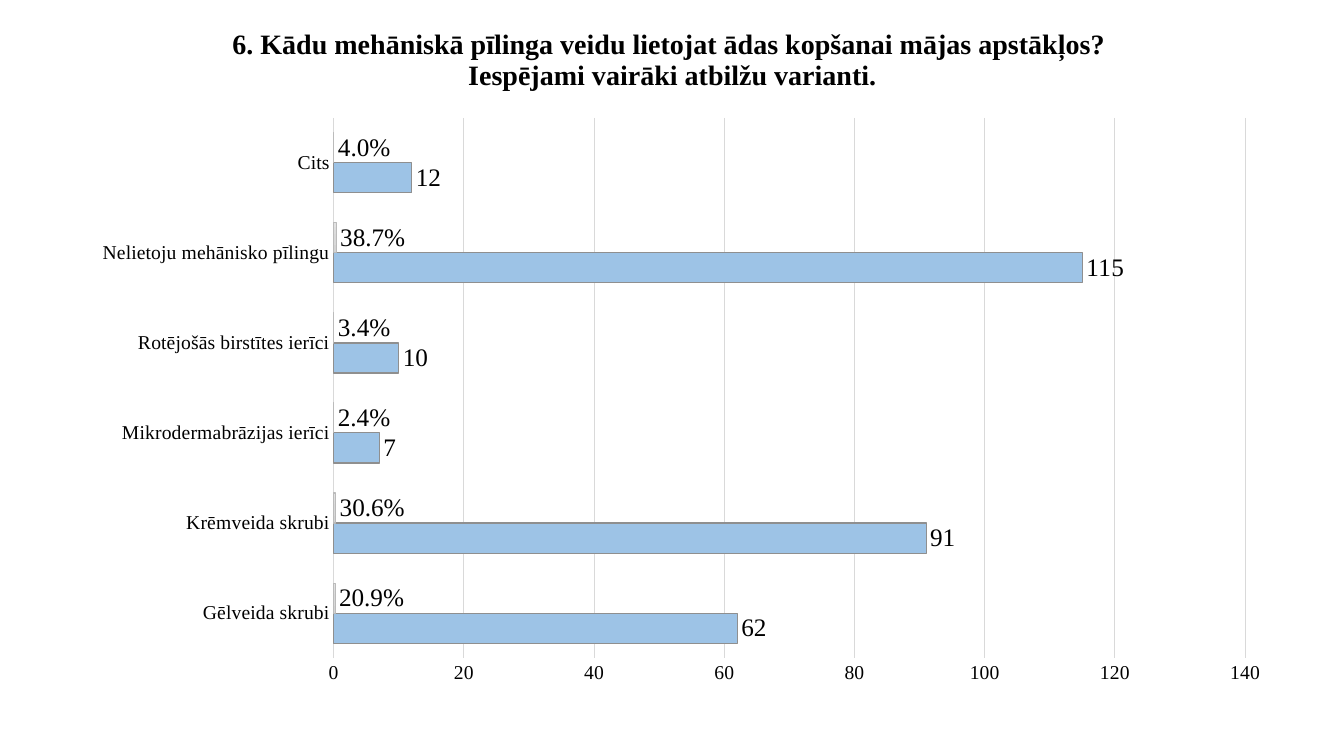
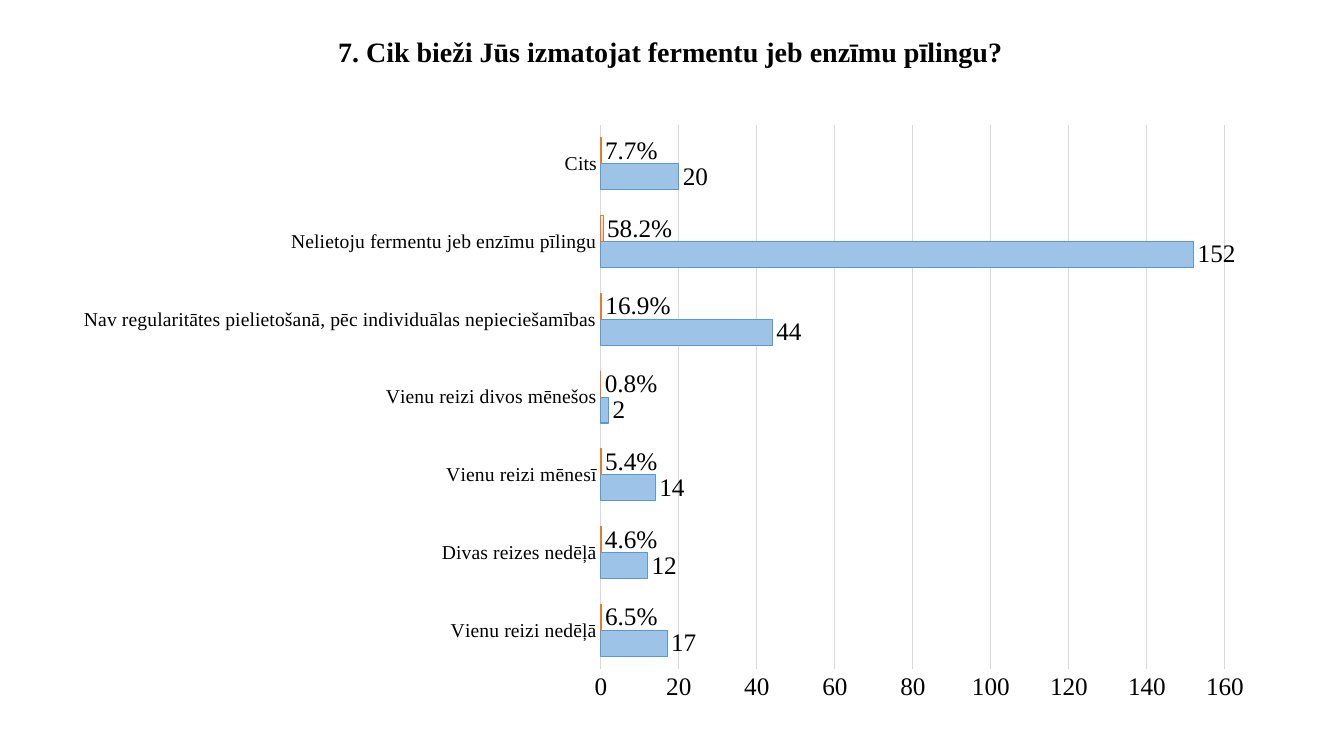
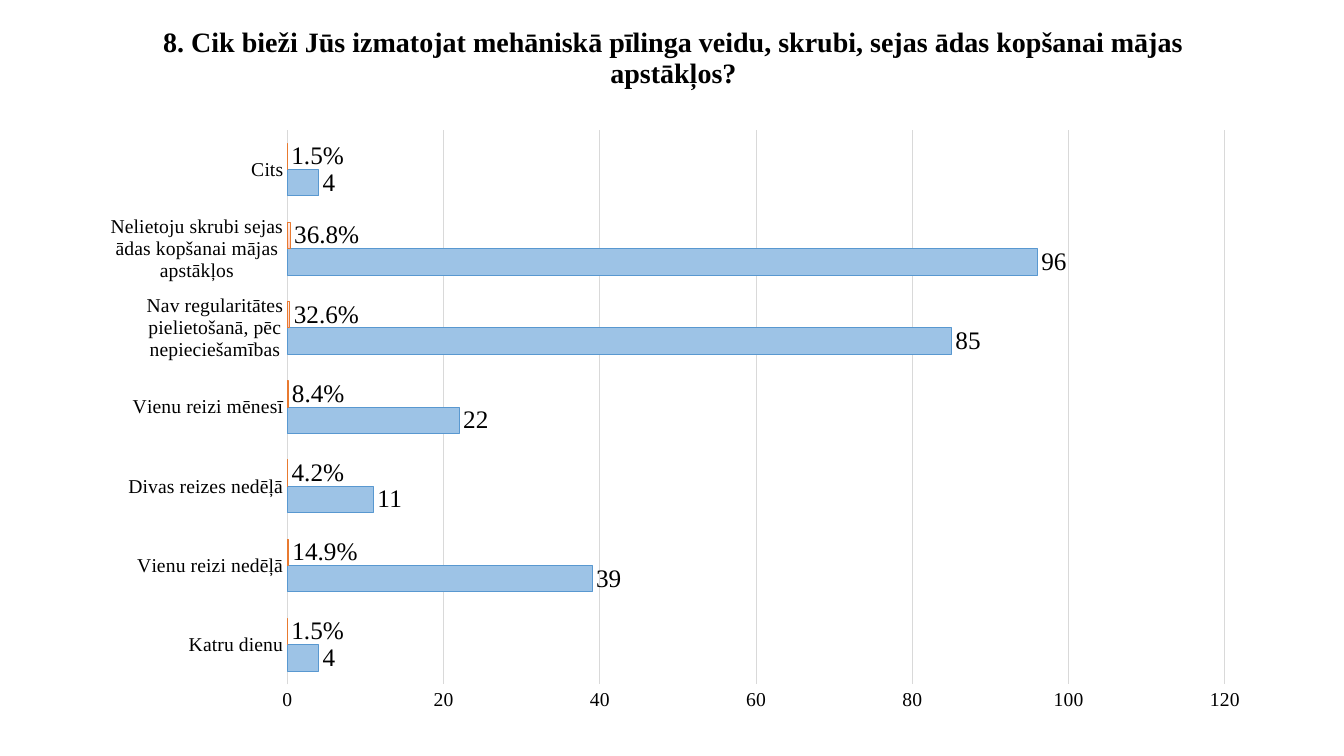
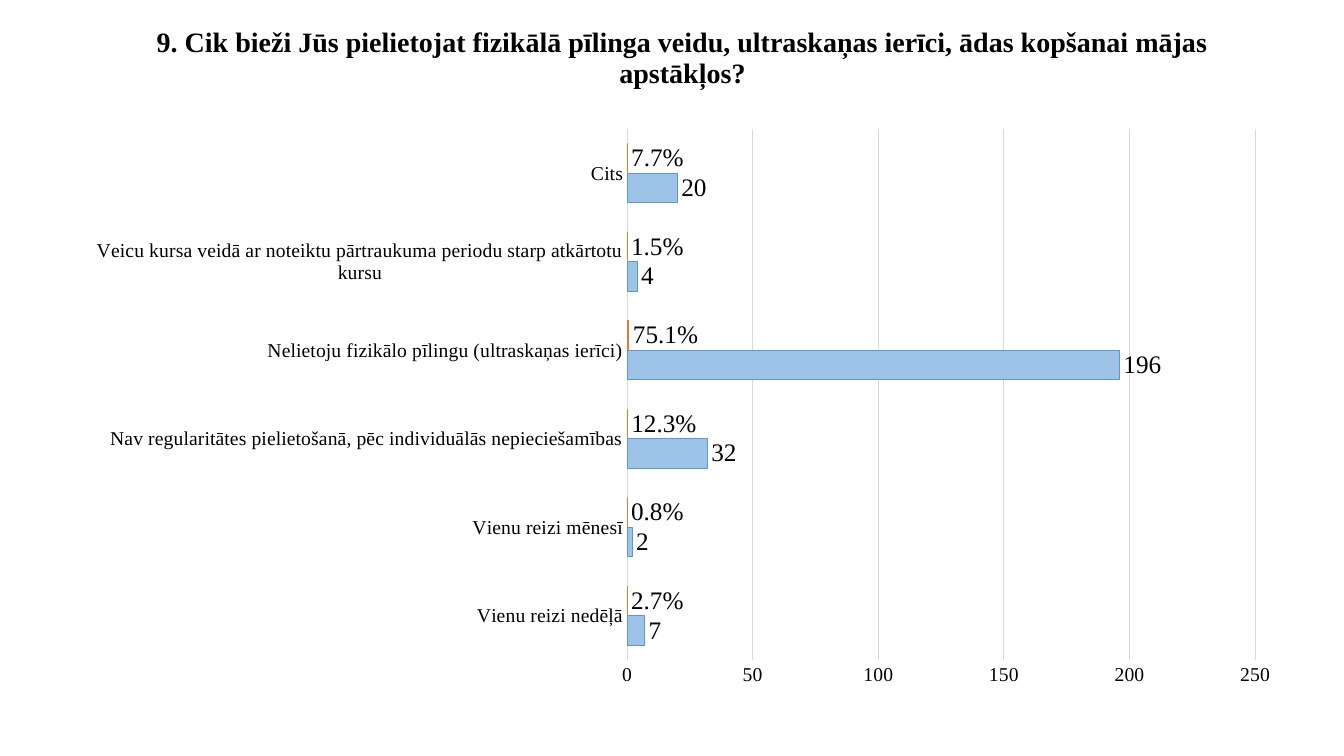
import pptx
import pptx.util
import pptx.chart.data
import pptx.dml.color
import pptx.enum.chart
import pptx.enum.text
import pptx.oxml
import pptx.oxml.ns

Inches = pptx.util.Inches
Pt = pptx.util.Pt
FONT = "Times New Roman"
COLORS = {"text": "000000", "grid": "D9D9D9", "bar": "9DC3E6"}
WARM = {
    "count": "5998D0", "share": "E87A30", "angle": 270,
    "stops": [(0, "FFC7B6"), (35, "FFD7CB"), (100, "FFF0EB")],
}
GRAY = {
    "count": "8F8F8F", "share": "BBBBBB", "angle": 90,
    "stops": [(0, "E2E2E2"), (50, "D9D9D9"), (100, "D4D4D4")],
}

SLIDES = [
    {
        "title": "6. Kādu mehāniskā pīlinga veidu lietojat ādas kopšanai mājas apstākļos? \nIespējami vairāki atbilžu varianti.",
        "head": (0.92, 0, 11.5, 1.21),
        "chart": (0.79, 1.05, 11.96, 5.85),
        "plot": (3.31, 1.17, 9.04, 5.36),
        "scale": (140, 20, 14),
        "theme": GRAY,
        "rows": [
            ("Gēlveida skrubi", 62, 0.209),
            ("Krēmveida skrubi", 91, 0.306),
            ("Mikrodermabrāzijas ierīci", 7, 0.024),
            ("Rotējošās birstītes ierīci", 10, 0.034),
            ("Nelietoju mehānisko pīlingu", 115, 0.387),
            ("Cits", 12, 0.04),
        ],
    },
    {
        "title": "7. Cik bieži Jūs izmatojat fermentu jeb enzīmu pīlingu?",
        "head": (0.9, 0, 11.5, 1.05),
        "chart": (0.6, 1.12, 11.99, 5.94),
        "plot": (5.96, 1.24, 6.19, 5.4),
        "scale": (160, 20, 18),
        "theme": WARM,
        "rows": [
            ("Vienu reizi nedēļā", 17, 0.065),
            ("Divas reizes nedēļā", 12, 0.046),
            ("Vienu reizi mēnesī", 14, 0.054),
            ("Vienu reizi divos mēnešos", 2, 0.008),
            ("Nav regularitātes pielietošanā, pēc individuālas nepieciešamības", 44, 0.169),
            ("Nelietoju fermentu jeb enzīmu pīlingu", 152, 0.582),
            ("Cits", 20, 0.077),
        ],
    },
    {
        "title": "8. Cik bieži Jūs izmatojat mehāniskā pīlinga veidu, skrubi, sejas ādas kopšanai mājas apstākļos?",
        "head": (0.93, 0, 11.5, 1.17),
        "chart": (0.86, 1.18, 11.66, 5.99),
        "plot": (2.85, 1.29, 9.3, 5.5),
        "scale": (120, 20, 14),
        "theme": WARM,
        "rows": [
            ("Katru dienu", 4, 0.015),
            ("Vienu reizi nedēļā", 39, 0.149),
            ("Divas reizes nedēļā", 11, 0.042),
            ("Vienu reizi mēnesī", 22, 0.084),
            ("Nav regularitātes pielietošanā, pēc nepieciešamības", 85, 0.326),
            ("Nelietoju skrubi sejas ādas kopšanai mājas apstākļos", 96, 0.368),
            ("Cits", 4, 0.015),
        ],
    },
    {
        "title": "9. Cik bieži Jūs pielietojat fizikālā pīlinga veidu, ultraskaņas ierīci, ādas kopšanai mājas apstākļos?",
        "head": (1.02, 0, 11.5, 1.17),
        "chart": (0.72, 1.17, 12.13, 5.76),
        "plot": (6.22, 1.28, 6.23, 5.27),
        "scale": (250, 50, 14),
        "theme": WARM,
        "rows": [
            ("Vienu reizi nedēļā", 7, 0.027),
            ("Vienu reizi mēnesī", 2, 0.008),
            ("Nav regularitātes pielietošanā, pēc individuālās nepieciešamības", 32, 0.123),
            ("Nelietoju fizikālo pīlingu (ultraskaņas ierīci)", 196, 0.751),
            ("Veicu kursa veidā ar noteiktu pārtraukuma periodu starp atkārtotu kursu", 4, 0.015),
            ("Cits", 20, 0.077),
        ],
    },
]


def rgb(code):
    return pptx.dml.color.RGBColor.from_string(code)


def set_font(font, size, name=FONT):
    font.size = Pt(size)
    font.name = name
    font.color.rgb = rgb(COLORS["text"])


def set_line(line, code):
    line.color.rgb = rgb(code)
    line.width = Pt(0.75)


def add_title(slide, text, box):
    frame = slide.shapes.add_textbox(*map(Inches, box)).text_frame
    frame.word_wrap = True
    frame.vertical_anchor = pptx.enum.text.MSO_ANCHOR.MIDDLE
    para = frame.paragraphs[0]
    para.text = text
    para.alignment = pptx.enum.text.PP_ALIGN.CENTER
    para.line_spacing = 0.9
    for run in para.runs:
        set_font(run.font, 20)
        run.font.bold = True


def fill_grad(series, stops, angle):
    marks = "".join(
        f'<a:gs pos="{pos * 1000}"><a:srgbClr val="{code}"/></a:gs>' for pos, code in stops
    )
    grad = pptx.oxml.parse_xml(
        f'<a:gradFill {pptx.oxml.ns.nsdecls("a")}><a:gsLst>{marks}</a:gsLst>'
        f'<a:lin ang="{angle * 60000}" scaled="0"/></a:gradFill>'
    )
    series._element.get_or_add_spPr().insert(0, grad)


def place_plot(chart, box, plot):
    left, top, width, height = box
    parts = {
        "x": (plot[0] - left) / width, "y": (plot[1] - top) / height,
        "w": plot[2] / width, "h": plot[3] / height,
    }
    modes = '<c:layoutTarget val="inner"/><c:xMode val="edge"/><c:yMode val="edge"/>'
    sizes = "".join(f'<c:{key} val="{val:.4f}"/>' for key, val in parts.items())
    layout = pptx.oxml.parse_xml(
        f'<c:layout {pptx.oxml.ns.nsdecls("c")}><c:manualLayout>{modes}{sizes}'
        '</c:manualLayout></c:layout>'
    )
    area = chart._chartSpace.chart.plotArea
    for old in area.findall(pptx.oxml.ns.qn("c:layout")):
        area.remove(old)
    area.insert(0, layout)


def style_axes(chart, scale):
    top, step, size = scale
    cats, vals = chart.category_axis, chart.value_axis
    for axis, points in ((cats, 14), (vals, size)):
        axis.major_tick_mark = pptx.enum.chart.XL_TICK_MARK.NONE
        axis.minor_tick_mark = pptx.enum.chart.XL_TICK_MARK.NONE
        set_font(axis.tick_labels.font, points)
    set_line(cats.format.line, COLORS["grid"])
    vals.minimum_scale, vals.maximum_scale, vals.major_unit = 0, top, step
    vals.format.line.fill.background()
    vals.has_major_gridlines = True
    set_line(vals.major_gridlines.format.line, COLORS["grid"])


def add_bars(slide, item):
    names, counts, shares = zip(*item["rows"])
    data = pptx.chart.data.CategoryChartData()
    data.categories = names
    data.add_series("Series 1", counts)
    data.add_series("Series 2", shares, "0.0%")
    chart = slide.shapes.add_chart(
        pptx.enum.chart.XL_CHART_TYPE.BAR_CLUSTERED, *map(Inches, item["chart"]), data
    ).chart
    chart.has_title = False
    chart.has_legend = False
    set_font(chart.font, 10, "Calibri")
    plot = chart.plots[0]
    plot.gap_width = 100
    plot.overlap = 0
    plot.vary_by_categories = False
    style_axes(chart, item["scale"])
    place_plot(chart, item["chart"], item["plot"])

    theme = item["theme"]
    count, share = plot.series
    count.format.fill.solid()
    count.format.fill.fore_color.rgb = rgb(COLORS["bar"])
    fill_grad(share, theme["stops"], theme["angle"])
    for series, key, style in ((count, "count", "General"), (share, "share", "0.0%")):
        set_line(series.format.line, theme[key])
        series.invert_if_negative = False
        labels = series.data_labels
        labels.show_value = True
        labels.number_format = style
        labels.number_format_is_linked = False
        labels.position = pptx.enum.chart.XL_LABEL_POSITION.OUTSIDE_END
        set_font(labels.font, 18)


def main():
    deck = pptx.Presentation()
    deck.slide_width, deck.slide_height = Inches(13.33), Inches(7.5)
    for item in SLIDES:
        slide = deck.slides.add_slide(deck.slide_layouts[6])
        add_title(slide, item["title"], item["head"])
        add_bars(slide, item)
    deck.save("out.pptx")


if __name__ == "__main__":
    main()
